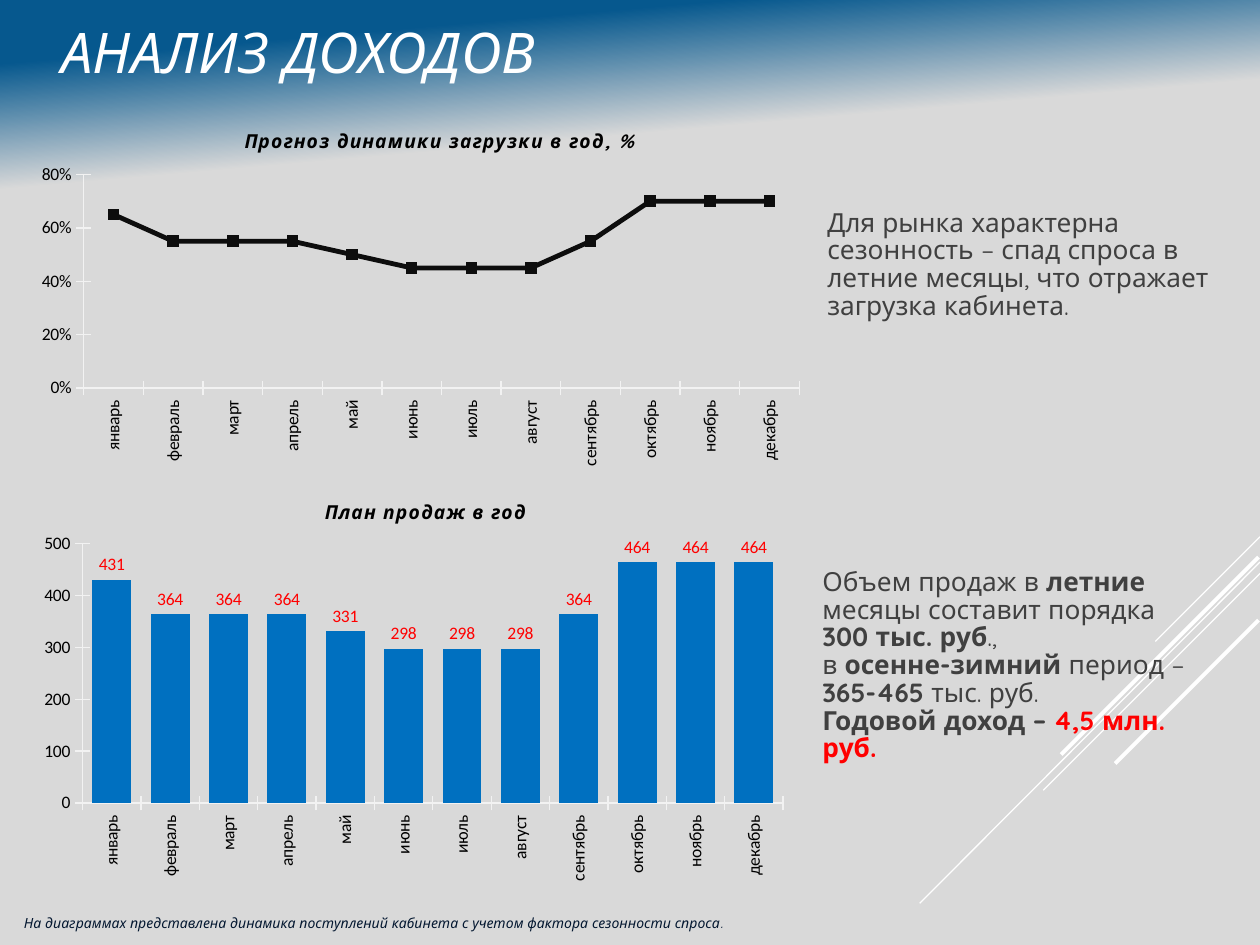
from lxml import etree
from pptx import Presentation
from pptx.chart.data import CategoryChartData
from pptx.dml.color import RGBColor
from pptx.enum.chart import XL_CHART_TYPE, XL_LABEL_POSITION, XL_MARKER_STYLE, XL_TICK_MARK
from pptx.enum.shapes import MSO_CONNECTOR
from pptx.enum.text import MSO_ANCHOR
from pptx.oxml import parse_xml
from pptx.oxml.ns import nsdecls, qn
from pptx.util import Cm, Pt

LINE_CHART = XL_CHART_TYPE.LINE_MARKERS
COLUMN_CHART = XL_CHART_TYPE.COLUMN_CLUSTERED
OUTSIDE_END = XL_LABEL_POSITION.OUTSIDE_END
SQUARE = XL_MARKER_STYLE.SQUARE
CROSS = XL_TICK_MARK.CROSS
STRAIGHT = MSO_CONNECTOR.STRAIGHT
TOP, MIDDLE = MSO_ANCHOR.TOP, MSO_ANCHOR.MIDDLE

WHITE = RGBColor(0xFF, 0xFF, 0xFF)
BLACK = RGBColor(0x00, 0x00, 0x00)
DEEP_BLUE = RGBColor(0x06, 0x58, 0x8E)
PALE_GREY = RGBColor(0xD9, 0xD9, 0xD9)
AXIS_GREY = RGBColor(0xF2, 0xF2, 0xF2)
TEXT_GREY = RGBColor(0x40, 0x40, 0x40)
NAVY = RGBColor(0x03, 0x17, 0x30)
RED = RGBColor(0xFF, 0x00, 0x00)
NEAR_BLACK = RGBColor(0x0D, 0x0D, 0x0D)
BAR_BLUE = RGBColor(0x00, 0x70, 0xC0)

MONTHS = ["январь", "февраль", "март", "апрель", "май", "июнь",
          "июль", "август", "сентябрь", "октябрь", "ноябрь", "декабрь"]
LOAD = [0.65, 0.55, 0.55, 0.55, 0.5, 0.45, 0.45, 0.45, 0.55, 0.7, 0.7, 0.7]
SALES = [431, 364, 364, 364, 331, 298, 298, 298, 364, 464, 464, 464]


def format_font(font, name="Quicksand", size=15, color=TEXT_GREY, bold=False, italic=False):
    font.name, font.size, font.bold, font.italic = name, Pt(size), bold, italic
    font.color.rgb = color


def add_run(paragraph, text, **style):
    """Add formatted text; a newline becomes a line break."""
    for index, part in enumerate(text.split("\n")):
        if index:
            paragraph.add_line_break()
        if part:
            run = paragraph.add_run()
            run.text = part
            format_font(run.font, **style)


def manual_layout(x, y, width=None, height=None):
    values = [("xMode", "edge"), ("yMode", "edge"), ("x", x), ("y", y)]
    if width:
        values = [("layoutTarget", "inner")] + values + [("w", width), ("h", height)]
    items = "".join(f'<c:{tag} val="{value}"/>' for tag, value in values)
    return parse_xml(f'<c:layout {nsdecls("c")}><c:manualLayout>{items}</c:manualLayout></c:layout>')


def place(element, layout, index):
    for old in element.findall(qn("c:layout")):
        element.remove(old)
    element.insert(index, layout)


class SlideBuilder:
    label_style = {"name": "Calibri", "size": 10, "color": BLACK}

    def __init__(self, slide):
        self.slide = slide

    def background(self):
        fill = self.slide.background.fill
        fill.gradient()
        fill.gradient_angle = 275
        for stop, position, color in zip(fill.gradient_stops, (0.06, 0.18), (DEEP_BLUE, PALE_GREY)):
            stop.position = position
            stop.color.rgb = color

    def line(self, x1, y1, x2, y2, width):
        connector = self.slide.shapes.add_connector(STRAIGHT, Cm(x1), Cm(y1), Cm(x2), Cm(y2))
        connector.line.color.rgb = WHITE
        connector.line.width = Pt(width)
        etree.SubElement(connector._element.spPr, qn("a:effectLst"))

    def text(self, box, paragraphs, anchor=TOP, indent=0, spacing=1.0, **style):
        """Each paragraph is a list of (text, format changes)."""
        frame = self.slide.shapes.add_textbox(*map(Cm, box)).text_frame
        frame.word_wrap = True
        frame.vertical_anchor = anchor
        for index, runs in enumerate(paragraphs):
            paragraph = frame.add_paragraph() if index else frame.paragraphs[0]
            paragraph.line_spacing = spacing
            if indent:
                paragraph._p.get_or_add_pPr().set("marL", str(Cm(indent)))
            for text, changes in runs:
                add_run(paragraph, text, **{**style, **changes})

    def axis(self, axis):
        axis.has_major_gridlines = False
        axis.major_tick_mark = CROSS
        axis.format.line.color.rgb = AXIS_GREY
        axis.format.line.width = Pt(0.75)
        format_font(axis.tick_labels.font, **self.label_style)

    def chart(self, kind, box, title, values, maximum, step, number_format, title_at, plot_at):
        data = CategoryChartData(number_format=number_format)
        data.categories = MONTHS
        data.add_series("Series 1", values)
        chart = self.slide.shapes.add_chart(kind, *map(Cm, box), data).chart
        chart.has_legend = False
        format_font(chart.font, **self.label_style)

        # Title and plot area
        chart.has_title = True
        paragraph = chart.chart_title.text_frame.paragraphs[0]
        add_run(paragraph, title, size=11, color=BLACK, bold=True, italic=True)
        paragraph.runs[0]._r.get_or_add_rPr().set("spc", "50")
        place(chart.chart_title._element, manual_layout(*title_at), 1)
        place(chart._chartSpace.chart.plotArea, manual_layout(*plot_at), 0)

        # Axes
        self.axis(chart.category_axis)
        self.axis(chart.value_axis)
        body = chart.category_axis._element.find(qn("c:txPr")).find(qn("a:bodyPr"))
        body.set("rot", "-5400000")
        body.set("vert", "horz")
        value_axis = chart.value_axis
        value_axis.minimum_scale, value_axis.maximum_scale = 0, maximum
        value_axis.major_unit = step
        value_axis.tick_labels.number_format = number_format
        value_axis.tick_labels.number_format_is_linked = False
        chart.plots[0].vary_by_categories = False
        return chart.plots[0]

    def line_chart(self, *arguments):
        series = self.chart(LINE_CHART, *arguments).series[0]
        series.smooth = False
        series.format.line.color.rgb = NEAR_BLACK
        series.format.line.width = Pt(2.75)
        series.marker.style, series.marker.size = SQUARE, 6
        series.marker.format.fill.solid()
        series.marker.format.fill.fore_color.rgb = NEAR_BLACK
        series.marker.format.line.color.rgb = NEAR_BLACK

    def column_chart(self, *arguments):
        plot = self.chart(COLUMN_CHART, *arguments)
        plot.gap_width, plot.overlap = 50, 100
        fill = plot.series[0].format.fill
        fill.solid()
        fill.fore_color.rgb = BAR_BLUE
        labels = plot.series[0].data_labels
        labels.show_value = True
        labels.position = OUTSIDE_END
        labels.number_format, labels.number_format_is_linked = "0", False
        format_font(labels.font, **{**self.label_style, "color": RED})


def main():
    presentation = Presentation()
    presentation.slide_width, presentation.slide_height = Cm(25.4), Cm(19.05)
    builder = SlideBuilder(presentation.slides.add_slide(presentation.slide_layouts[6]))
    builder.background()

    # Diagonal rays
    for ray in [(25.4, 10.82, 23.29, 12.93, 0.75), (25.4, 11.33, 18.54, 18.21, 0.75),
                (25.4, 11.56, 21.03, 15.93, 0.75), (25.37, 11.23, 21.39, 15.21, 2.25),
                (25.37, 12.5, 22.48, 15.39, 2.25)]:
        builder.line(*ray)

    # Comments beside the charts
    bold = {"bold": True}
    builder.text((16.43, 4.11, 8.97, 2.82), [[
        ("Для рынка характерна сезонность – спад спроса в летние месяцы, "
         "что отражает загрузка кабинета.", {})]], spacing=0.88)
    builder.text((16.33, 11.35, 8.59, 4.11), [
        [("Объем продаж в ", {}), ("летние", bold), (" месяцы составит порядка \n", {}),
         ("300 тыс. руб", bold), ("., \nв ", {}), ("осенне-зимний", bold),
         (" период – ", {}), ("365-465", bold), (" тыс. руб.", {})],
        [("Годовой доход – ", bold), ("4,5 млн. руб.", {"bold": True, "color": RED})],
    ], spacing=0.88)

    # Footnote and title
    builder.text((0.23, 18.31, 16.21, 0.61), [[
        ("На диаграммах представлена динамика поступлений кабинета "
         "с учетом фактора сезонности спроса.", {})]], size=8, color=NAVY, italic=True)
    builder.text((0, -0.08, 25.4, 2.21), [[("АНАЛИЗ ДОХОДОВ", {})]],
                 anchor=MIDDLE, indent=0.99, size=32, color=WHITE, italic=True)

    # Charts
    builder.line_chart((0.58, 2.11, 15.85, 7.42), "Прогноз динамики загрузки в год, %",
                       LOAD, 0.8, 0.2, "0%", (0.27, 0.05), (0.07, 0.19, 0.91, 0.58))
    builder.column_chart((0.58, 9.53, 15.52, 8.43), "План продаж в год",
                         SALES, 500, 100, "0", (0.38, 0.05), (0.07, 0.17, 0.91, 0.62))

    presentation.save("out.pptx")


if __name__ == "__main__":
    main()
